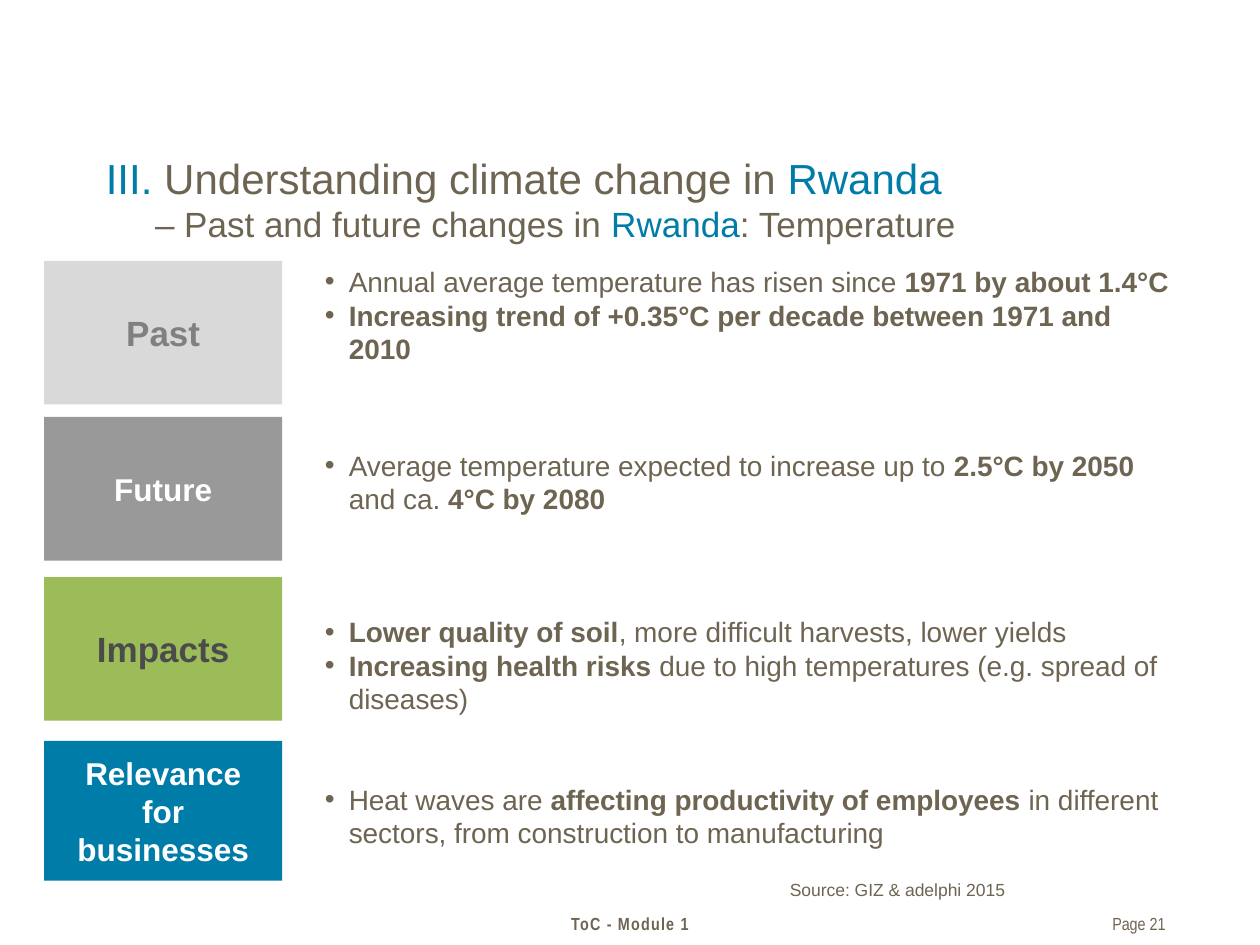
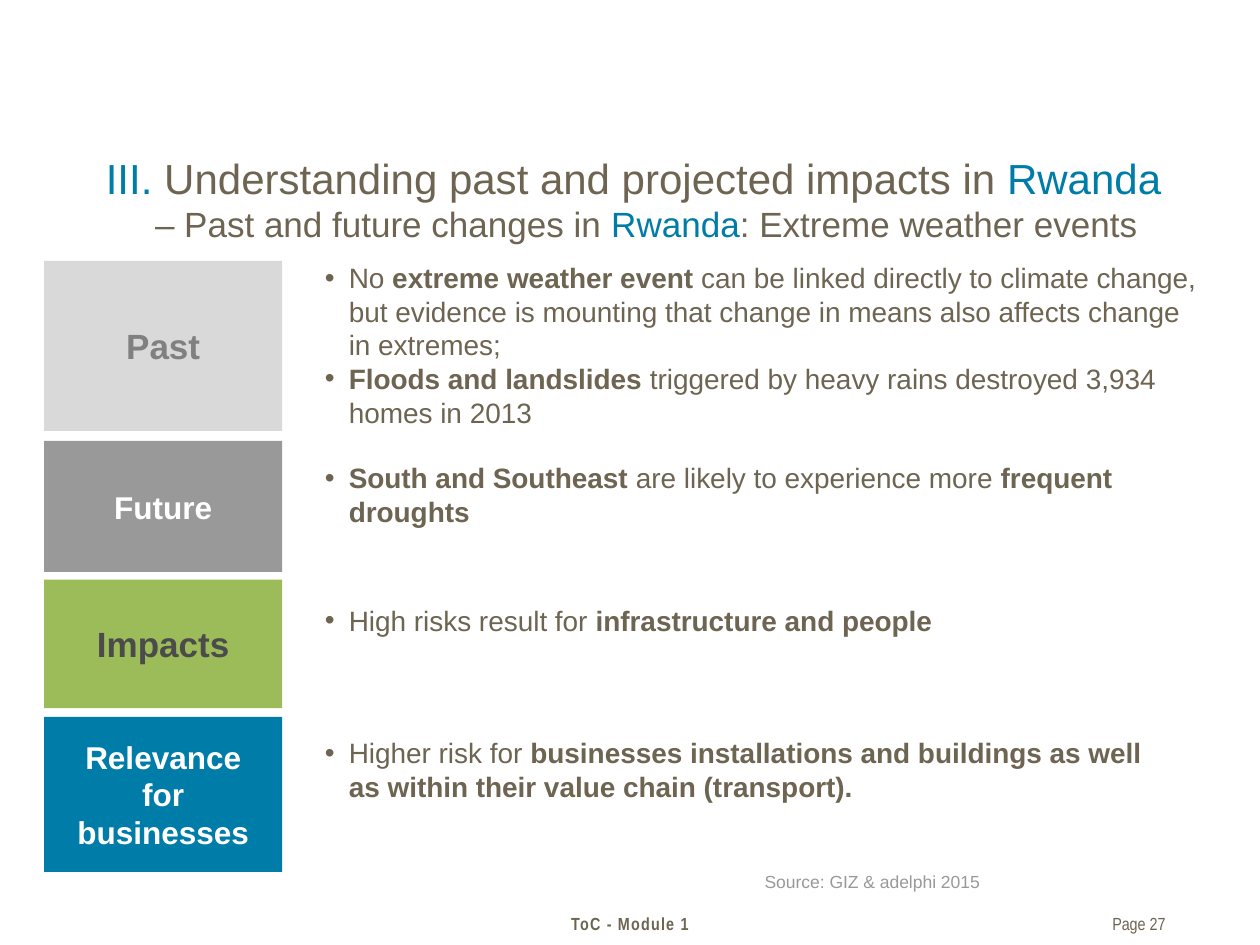
from lxml.etree import SubElement
from pptx import Presentation
from pptx.dml.color import RGBColor
from pptx.enum.shapes import MSO_SHAPE
from pptx.enum.text import MSO_ANCHOR, MSO_AUTO_SIZE, PP_ALIGN
from pptx.oxml.ns import qn
from pptx.util import Pt

PX = 9144
COLORS = {
    "text": "6E6452", "blue": "007CA8", "light": "D9D9D9", "gray": "999999",
    "green": "9CBC59", "white": "FFFFFF", "mid": "808080", "dark": "4B4B4B",
}
LABELS = [
    ("Past", "light", "mid", 20),
    ("Future", "gray", "white", 18),
    ("Impacts", "green", "dark", 20),
    ("Relevance for businesses", "blue", "white", 18),
]
LABEL_LEFT, LABEL_WIDTH = 35, 189
BULLET_LEFT, BULLET_INDENT = 248, 19
TITLE_INDENT = 39
LINE_HEIGHT, INSET = 27, 5

SLIDES = [
    {
        "title": "|III. |Understanding climate change in |Rwanda",
        "subtitle": "– Past and future changes in |Rwanda|: Temperature",
        "labels": [(207, 114), (331, 114), (458, 114), (588, 111)],
        "bullets": [
            (205, 693, 3, ["Annual average temperature has risen since |1971 by about 1.4°C",
                           "|Increasing trend of +0.35°C per decade between 1971 and 2010"]),
            (351, 693, 2, ["Average temperature expected to increase up to "
                           "|2.5°C by 2050 |and ca. |4°C by 2080"]),
            (483, 693, 3, ["|Lower quality of soil|, more difficult harvests, lower yields",
                           "|Increasing health risks |due to high temperatures "
                           "(e.g. spread of diseases)"]),
            (616, 693, 2, ["Heat waves are |affecting productivity of employees"
                           "| in different sectors, from construction to manufacturing"]),
        ],
        "source": (617, 693, "text"),
        "page": "Page 21",
    },
    {
        "title": "|III. |Understanding past and projected impacts in |Rwanda",
        "subtitle": "– Past and future changes in |Rwanda|: Extreme weather events",
        "labels": [(207, 135), (350, 104), (460, 102), (569, 123)],
        "bullets": [
            (202, 720, 5, ["No |extreme weather event |can be linked directly to climate "
                           "change, but evidence is mounting that change in means also "
                           "affects change in extremes;",
                           "|Floods and landslides |triggered by heavy rains destroyed "
                           "3,934 homes in 2013"]),
            (361, 693, 2, ["|South and Southeast |are likely to experience more "
                           "|frequent droughts"]),
            (474, 693, 1, ["High risks result for |infrastructure and people"]),
            (579, 693, 2, ["Higher risk for |businesses installations and buildings as well "
                           "as within their value chain (transport)."]),
        ],
        "source": (597, 686, "gray"),
        "page": "Page 27",
    },
]


def rgb(name):
    return RGBColor.from_string(COLORS[name])


def place(sp, left, top, width, height):
    for attr, px in {"left": left, "top": top, "width": width, "height": height}.items():
        setattr(sp, attr, px * PX)


def format_frame(tf, anchor=MSO_ANCHOR.TOP, insets=(10, 5, 10, 5)):
    left, top, right, bottom = insets
    values = {
        "word_wrap": True, "auto_size": MSO_AUTO_SIZE.NONE, "vertical_anchor": anchor,
        "margin_left": left * PX, "margin_top": top * PX,
        "margin_right": right * PX, "margin_bottom": bottom * PX,
    }
    for attr, value in values.items():
        setattr(tf, attr, value)


def add_run(p, text, size, color="text", bold=False, name="Arial"):
    r = p.add_run()
    r.text = text
    for attr, value in {"size": Pt(size), "bold": bold, "name": name}.items():
        setattr(r.font, attr, value)
    r.font.color.rgb = rgb(color)
    return r


def add_runs(p, marked, size, accent):
    for i, part in enumerate(marked.split("|")):
        if part:
            add_run(p, part, size, **(accent if i % 2 else {}))


def set_indent(p, px):
    pPr = p._p.get_or_add_pPr()
    pPr.set("marL", str(px * PX))
    pPr.set("indent", str(-px * PX))
    return pPr


def add_text_box(slide, box, **frame):
    tf = slide.shapes.add_textbox(*(px * PX for px in box)).text_frame
    format_frame(tf, **frame)
    return tf


def set_title(slide, title, subtitle):
    sp = slide.shapes.title
    place(sp, 74, 116, 894, 92)
    format_frame(sp.text_frame)
    p = sp.text_frame.paragraphs[0]
    p.alignment = PP_ALIGN.LEFT
    set_indent(p, TITLE_INDENT)
    add_runs(p, title, 24, {"color": "blue"})
    p.add_line_break()
    add_runs(p, subtitle, 20, {"color": "blue"})


def add_label(slide, top, height, text, fill, color, size):
    sp = slide.shapes.add_shape(MSO_SHAPE.RECTANGLE, 0, 0, 0, 0)
    place(sp, LABEL_LEFT, top, LABEL_WIDTH, height)
    sp.shadow.inherit = False
    sp.fill.solid()
    sp.fill.fore_color.rgb = rgb(fill)
    sp.line.fill.background()
    format_frame(sp.text_frame, MSO_ANCHOR.MIDDLE, (24, 26, 24, 26))
    p = sp.text_frame.paragraphs[0]
    p.alignment = PP_ALIGN.CENTER
    add_run(p, text, size, color, bold=True)


def add_bullets(slide, top, width, lines, items):
    tf = add_text_box(slide, (BULLET_LEFT, top, width, lines * LINE_HEIGHT + 2 * INSET))
    for i, item in enumerate(items):
        p = tf.add_paragraph() if i else tf.paragraphs[0]
        pPr = set_indent(p, BULLET_INDENT)
        SubElement(pPr, qn("a:buFont")).set("typeface", "Arial")
        SubElement(pPr, qn("a:buChar")).set("char", "•")
        add_runs(p, item, 16, {"bold": True})


def add_note(slide, box, text, align=PP_ALIGN.LEFT, frame=None, **font):
    p = add_text_box(slide, box, **(frame or {})).paragraphs[0]
    p.alignment = align
    return add_run(p, text, 10, **font)


def add_footer(slide, page):
    r = add_note(slide, (313, 720, 374, 27), "ToC - Module 1", PP_ALIGN.CENTER,
                 bold=True, name="Arial Narrow")
    r.font._element.set("spc", "70")
    add_note(slide, (824, 720, 101, 27), page, PP_ALIGN.RIGHT,
             {"insets": (10, 5, 0, 5)}, name="Arial Narrow")


def build_slide(prs, content):
    slide = prs.slides.add_slide(prs.slide_layouts[5])
    set_title(slide, content["title"], content["subtitle"])
    for span, label in zip(content["labels"], LABELS):
        add_label(slide, *span, *label)
    for bullets in content["bullets"]:
        add_bullets(slide, *bullets)
    left, top, color = content["source"]
    add_note(slide, (left, top, 367, 27), "Source: GIZ & adelphi 2015", color=color)
    add_footer(slide, content["page"])


def main():
    prs = Presentation()
    prs.slide_width, prs.slide_height = 1000 * PX, 750 * PX
    for content in SLIDES:
        build_slide(prs, content)
    prs.save("out.pptx")


if __name__ == "__main__":
    main()
